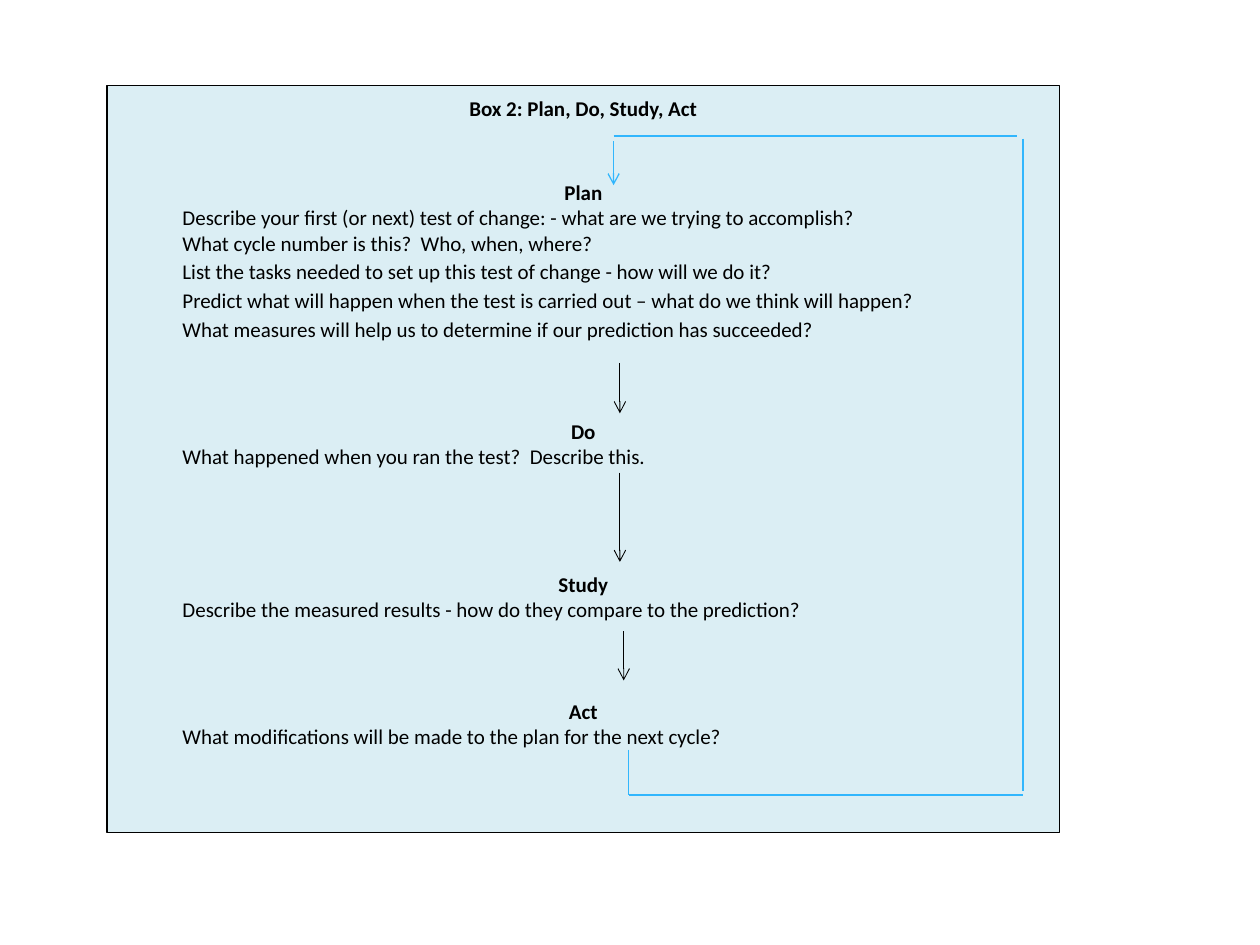
from lxml import etree
from pptx import Presentation
from pptx.dml.color import RGBColor
from pptx.enum.shapes import MSO_CONNECTOR, MSO_SHAPE
from pptx.enum.text import MSO_ANCHOR, MSO_AUTO_SIZE, PP_ALIGN
from pptx.oxml.ns import qn
from pptx.util import Inches, Pt

STRAIGHT = MSO_CONNECTOR.STRAIGHT
RECTANGLE = MSO_SHAPE.RECTANGLE
TOP = MSO_ANCHOR.TOP
NO_AUTOFIT = MSO_AUTO_SIZE.NONE
LEFT, CENTER = PP_ALIGN.LEFT, PP_ALIGN.CENTER

BLACK, SKY, PALE_BLUE = "000000", "31B6FD", "DBEEF4"
FONT, FONT_SIZE = "Calibri", 12
LINE_HEIGHT = 14.65  # points, one single-spaced line

TITLE = "Box 2: Plan, Do, Study, Act"

# Heading, lines left free above it, then (question, points above it)
STAGES = [
    ("Plan", 2.3, [
        ("Describe your first (or next) test of change: - what are we trying to accomplish?", 0),
        ("What cycle number is this?  Who, when, where?", 0),
        ("List the tasks needed to set up this test of change - how will we do it?", 2),
        ("Predict what will happen when the test is carried out – what do we think will happen?", 2),
        ("What measures will help us to determine if our prediction has succeeded?", 2),
    ]),
    ("Do", 3, [("What happened when you ran the test?  Describe this.", 0)]),
    ("Study", 4, [("Describe the measured results - how do they compare to the prediction?", 0)]),
    ("Act", 3, [("What modifications will be made to the plan for the next cycle?", 0)]),
]

# Arrows between stages: x, top, bottom
STAGE_ARROWS = [(4.92, 2.88, 3.28), (4.92, 3.75, 4.46), (4.95, 5.01, 5.4)]

# Loop from Act back to Plan: start, end, arrowhead
LOOP = [
    ((4.99, 5.95), (4.99, 6.31), False),
    ((4.99, 6.31), (8.12, 6.31), False),
    ((8.12, 1.1), (8.12, 6.28), False),
    ((4.87, 1.08), (8.07, 1.08), False),
    ((4.87, 1.12), (4.87, 1.47), True),
]


def color(hex_code):
    return RGBColor.from_string(hex_code)


def write(paragraph, text, bold=False, align=LEFT, before=0, spacing=1.0):
    paragraph.alignment = align
    paragraph.space_before = Pt(before)
    paragraph.line_spacing = spacing
    run = paragraph.add_run()
    run.text = text
    run.font.name = FONT
    run.font.size = Pt(FONT_SIZE)
    run.font.bold = bold
    run.font.color.rgb = color(BLACK)


def hang(paragraph, margin, indent):
    properties = paragraph._p.get_or_add_pPr()
    properties.set("marL", str(Inches(margin)))
    properties.set("indent", str(Inches(indent)))


def draw_line(slide, start, end, hex_code, width, arrow):
    points = [Inches(value) for value in (*start, *end)]
    connector = slide.shapes.add_connector(STRAIGHT, *points)
    connector.line.color.rgb = color(hex_code)
    connector.line.width = Pt(width)
    if arrow:
        outline = connector.line._get_or_add_ln()
        etree.SubElement(outline, qn("a:tailEnd"), type="arrow")
    etree.SubElement(connector._element.spPr, qn("a:effectLst"))


def main():
    prs = Presentation()
    prs.slide_width, prs.slide_height = Inches(10), Inches(7.5)
    slide = prs.slides.add_slide(prs.slide_layouts[6])

    # Box
    cycle_box = slide.shapes.add_shape(
        RECTANGLE, Inches(0.85), Inches(0.68), Inches(7.56), Inches(5.93))
    cycle_box.shadow.inherit = False
    cycle_box.fill.solid()
    cycle_box.fill.fore_color.rgb = color(PALE_BLUE)
    cycle_box.line.color.rgb = color(BLACK)
    cycle_box.line.width = Pt(0.75)

    # Title, headings and questions
    frame = cycle_box.text_frame
    frame.word_wrap = True
    frame.auto_size = NO_AUTOFIT
    frame.vertical_anchor = TOP
    write(frame.paragraphs[0], TITLE, bold=True, align=CENTER, spacing=1.15)
    for heading, free_lines, questions in STAGES:
        write(frame.add_paragraph(), heading, bold=True, align=CENTER,
              before=free_lines * LINE_HEIGHT)
        for question, before in questions:
            paragraph = frame.add_paragraph()
            write(paragraph, question, before=before)
            hang(paragraph, 0.75, -0.25)

    # Arrows and loop
    for x, top, bottom in STAGE_ARROWS:
        draw_line(slide, (x, top), (x, bottom), BLACK, 0.5, True)
    for start, end, arrow in LOOP:
        draw_line(slide, start, end, SKY, 0.75, arrow)

    prs.save("out.pptx")


if __name__ == "__main__":
    main()
